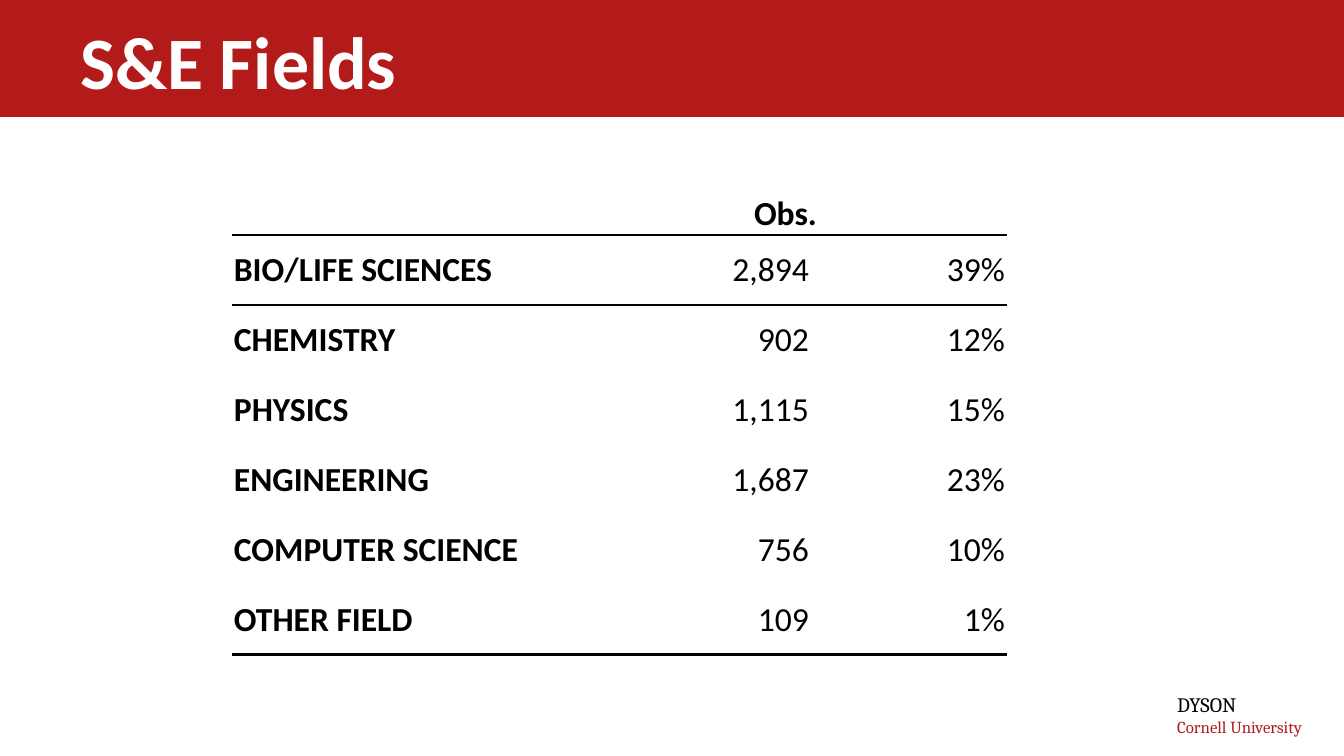
"""Build the S&E Fields slide: a title band, a table of observations and a school signature."""
from lxml import etree
from pptx import Presentation, util as u
from pptx.dml.color import RGBColor
from pptx.enum import shapes, text
from pptx.oxml.ns import qn

TITLE = "S&E Fields"
HEADER = ("", "Obs.", "")
FIELDS = [
    ("BIO/LIFE SCIENCES", "2,894", "39%"),
    ("CHEMISTRY", "902", "12%"),
    ("PHYSICS", "1,115", "15%"),
    ("ENGINEERING", "1,687", "23%"),
    ("COMPUTER SCIENCE", "756", "10%"),
    ("OTHER FIELD", "109", "1%"),
]
SCHOOL = "DYSON"
UNIVERSITY = "Cornell University"

BAND_RED = RGBColor(0xB3, 0x1B, 0x1B)
SIGNATURE_RED = RGBColor(0xB0, 0x1C, 0x20)
BLACK = RGBColor(0, 0, 0)
WHITE = RGBColor(255, 255, 255)

COLUMN_WIDTHS = (397, 188, 188)
HEADER_HEIGHT, FIELD_HEIGHT = 59, 70
OBS_INDENT = 9


def px(count):
    return u.Emu(round(count * 914400 / 134.4))


def box(left, top, width, height):
    return px(left), px(top), px(width), px(height)


def write(paragraph, words, size=18, font="Calibri", color=BLACK, bold=False,
          align=text.PP_ALIGN.LEFT):
    paragraph.alignment = align
    run = paragraph.add_run()
    run.text = words
    run.font.size = u.Pt(size)
    run.font.name = font
    run.font.color.rgb = color
    run.font.bold = bold


def rule(cell, edge):
    line = etree.Element(qn(f"a:{edge}"), w=str(u.Pt(1.5)))
    fill = etree.SubElement(line, qn("a:solidFill"))
    etree.SubElement(fill, qn("a:srgbClr"), val=str(BLACK))
    cell._tc.get_or_add_tcPr().insert(0, line)


def add_title(slide):
    title = slide.shapes.title
    title.left, title.top, title.width, title.height = box(67, 9, 1210, 101)
    title.text_frame.vertical_anchor = text.MSO_ANCHOR.MIDDLE
    title.text_frame.auto_size = text.MSO_AUTO_SIZE.NONE
    write(title.text_frame.paragraphs[0], TITLE, size=39.6, color=WHITE, bold=True)

    band = slide.shapes.add_shape(shapes.MSO_SHAPE.RECTANGLE, *box(0, 0, 1344, 117))
    band.shadow.inherit = False
    band.fill.solid()
    band.fill.fore_color.rgb = BAND_RED
    band.line.fill.background()
    title._element.addprevious(band._element)


def add_fields(slide):
    rows = [HEADER, *FIELDS]
    height = HEADER_HEIGHT + FIELD_HEIGHT * len(FIELDS)
    fields = slide.shapes.add_table(
        len(rows), len(HEADER), *box(233, 176, sum(COLUMN_WIDTHS), height)).table
    fields.first_row = fields.horz_banding = False
    for column, width in zip(fields.columns, COLUMN_WIDTHS):
        column.width = px(width)
    edges = {0: "lnB", 1: "lnT", len(FIELDS): "lnB"}
    for r, row in enumerate(rows):
        fields.rows[r].height = px(FIELD_HEIGHT if r else HEADER_HEIGHT)
        for c, words in enumerate(row):
            cell = fields.cell(r, c)
            cell.fill.background()
            cell.margin_left = cell.margin_top = px(1)
            cell.margin_right = px(OBS_INDENT if r and c == 1 else 1)
            cell.margin_bottom = 0
            cell.vertical_anchor = text.MSO_ANCHOR.MIDDLE if r else text.MSO_ANCHOR.BOTTOM
            if words:
                write(cell.text_frame.paragraphs[0], words, bold=r == 0 or c == 0,
                      align=text.PP_ALIGN.RIGHT if c else text.PP_ALIGN.LEFT)
            if r in edges:
                rule(cell, edges[r])


def add_signature(slide):
    signature = slide.shapes.add_textbox(*box(1164, 685, 167, 59)).text_frame
    signature.word_wrap = True
    write(signature.paragraphs[0], SCHOOL, size=11, font="Cambria")
    write(signature.add_paragraph(), UNIVERSITY, size=9, font="Cambria", color=SIGNATURE_RED)


def main():
    deck = Presentation()
    deck.slide_width, deck.slide_height = px(1344), px(756)
    slide = deck.slides.add_slide(deck.slide_layouts.get_by_name("Title Only"))
    add_title(slide)
    add_signature(slide)
    add_fields(slide)
    deck.save("out.pptx")


if __name__ == "__main__":
    main()
